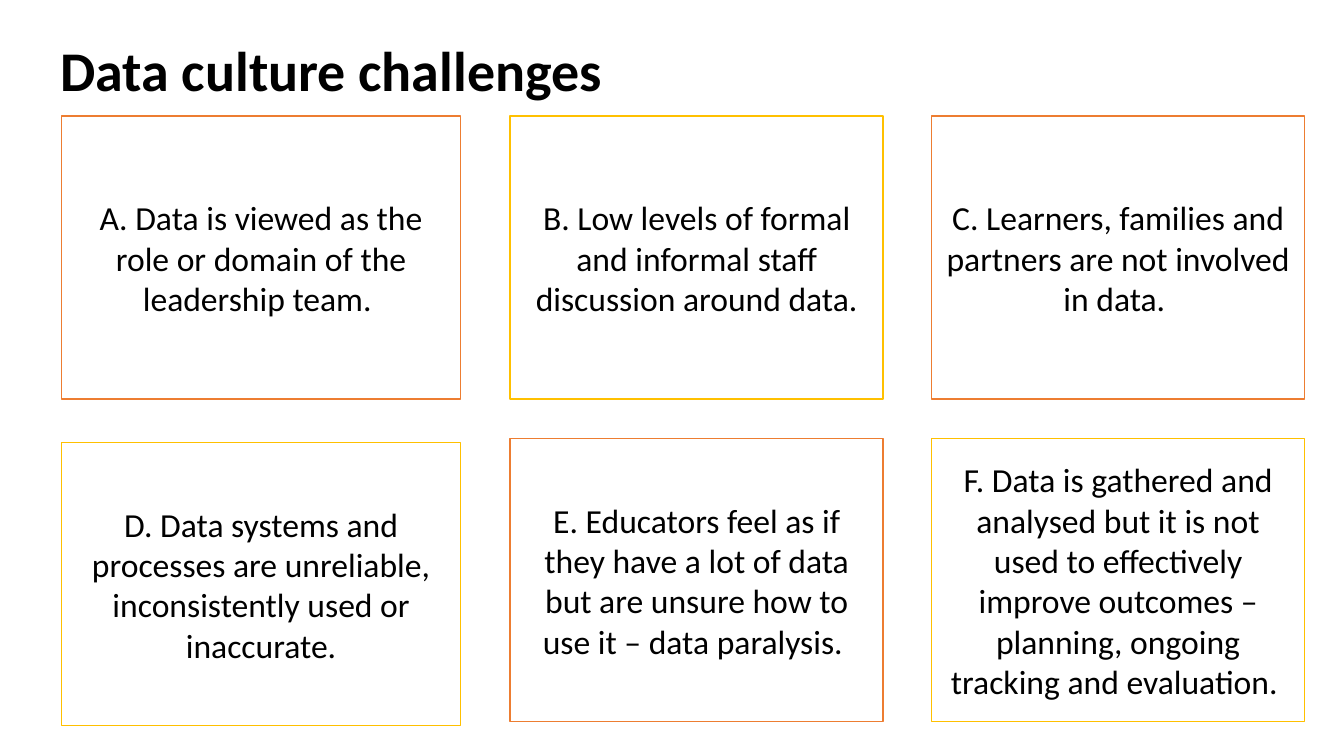
import pptx
import pptx.util
import pptx.dml.color
import pptx.enum.shapes
import pptx.enum.text

COLORS = {"paper": "FFFFFF", "ink": "000000", "orange": "ED7D31", "gold": "FFC000"}
ALIGN = pptx.enum.text.PP_ALIGN
ANCHOR = pptx.enum.text.MSO_ANCHOR

COLUMNS = [(0.61, 3.96), (5.06, 3.7), (9.24, 3.7)]
ROWS = [(1.15, 2.81), (4.35, 2.81)]
FIRST_CARD_DROP = 0.04

CHALLENGES = [
    "A. Data is viewed as the role or domain of the leadership team. ",
    "B. Low levels of formal and informal staff discussion around data.",
    "C. Learners, families and partners are not involved in data. ",
    "D. Data systems and processes are unreliable, inconsistently used or inaccurate.",
    "E. Educators feel as if they have a lot of data but are unsure how to use it – data paralysis. ",
    "F. Data is gathered and analysed but it is not used to effectively improve outcomes – "
    "planning, ongoing tracking and evaluation. ",
]


def rgb(name):
    return pptx.dml.color.RGBColor.from_string(COLORS[name])


def write(frame, text, size=24, bold=False, align=ALIGN.CENTER, color="ink", font="Calibri"):
    frame.word_wrap = True
    frame.auto_size = pptx.enum.text.MSO_AUTO_SIZE.NONE
    frame.vertical_anchor = ANCHOR.MIDDLE
    paragraph = frame.paragraphs[0]
    paragraph.alignment = align
    run = paragraph.add_run()
    run.text = text
    run.font.name = font
    run.font.size = pptx.util.Pt(size)
    run.font.bold = bold
    run.font.color.rgb = rgb(color)


class ChallengeSlide:
    def __init__(self, deck):
        self.border = pptx.util.Pt(1)
        self.slide = deck.slides.add_slide(deck.slide_layouts[5])
        background = self.slide.background.fill
        background.solid()
        background.fore_color.rgb = rgb("paper")

    def heading(self, text, box):
        title = self.slide.shapes.title
        title.left, title.top, title.width, title.height = map(pptx.util.Inches, box)
        write(title.text_frame, text, size=40, bold=True, align=ALIGN.LEFT)

    def card(self, text, column, row, outline, drop=0):
        left, width = COLUMNS[column]
        top, height = ROWS[row]
        box = map(pptx.util.Inches, (left, top + drop, width, height))
        challenge = self.slide.shapes.add_shape(
            pptx.enum.shapes.MSO_SHAPE.RECTANGLE, *box)
        challenge.shadow.inherit = False
        challenge.fill.solid()
        challenge.fill.fore_color.rgb = rgb("paper")
        challenge.line.color.rgb = rgb(outline)
        challenge.line.width = self.border
        write(challenge.text_frame, text)


def main():
    deck = pptx.Presentation()
    deck.slide_width = pptx.util.Inches(13.33)
    deck.slide_height = pptx.util.Inches(7.5)
    page = ChallengeSlide(deck)
    page.heading("Data culture challenges", (0.5, 0.3, 7.19, 0.77))
    for index, challenge in enumerate(CHALLENGES):
        row, column = divmod(index, len(COLUMNS))
        outline = "gold" if index % 2 else "orange"
        drop = FIRST_CARD_DROP if row == 1 and column == 0 else 0
        page.card(challenge, column, row, outline, drop)
    deck.save("out.pptx")


if __name__ == "__main__":
    main()
